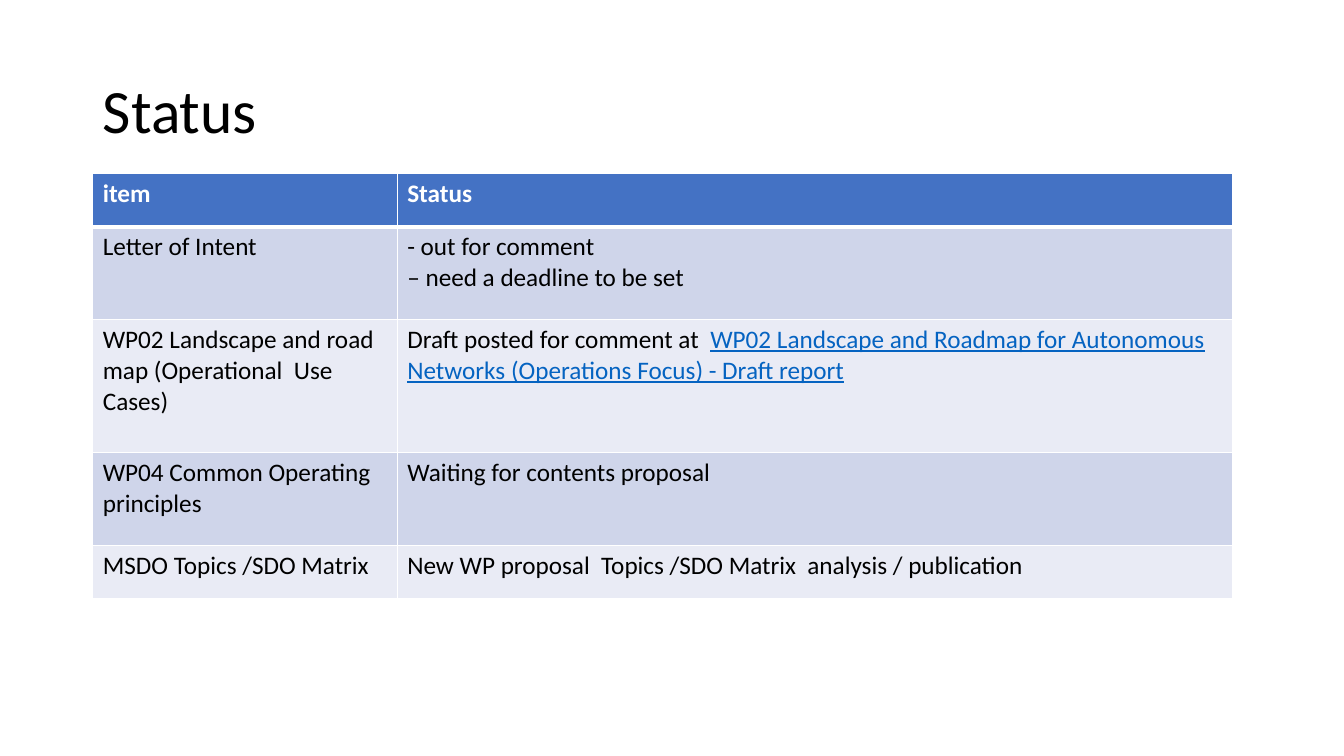
from dataclasses import dataclass

import pptx
import pptx.dml.color
import pptx.enum.text
import pptx.oxml
import pptx.oxml.ns
import pptx.util

Inches = pptx.util.Inches
Pt = pptx.util.Pt


@dataclass(frozen=True)
class Theme:
    font: str = "Calibri"
    text: str = "000000"
    white: str = "FFFFFF"
    header: str = "4472C4"
    bands: tuple = ("CFD5EA", "E9EBF5")
    link: str = "0563C1"
    title_size: int = 44
    body_size: int = 18
    rule: int = 1
    header_rule: int = 3


THEME = Theme()
COLUMNS = (3.02, 8.29)
HEIGHTS = (0.53, 0.92, 1.32, 0.92, 0.53)
HEADINGS = ("item", "Status")
ITEMS = (
    ("Letter of Intent", ("- out for comment", "– need a deadline to be set")),
    ("WP02 Landscape and road map (Operational  Use Cases)",
     ("Draft posted for comment at  ",)),
    ("WP04 Common Operating principles", ("Waiting for contents proposal",)),
    ("MSDO Topics /SDO Matrix",
     ("New WP proposal  Topics /SDO Matrix  analysis / publication",)),
)
DRAFT_ROW = 2
DRAFT_REPORT = ("WP02 Landscape and Roadmap for Autonomous Networks "
                "(Operations Focus) - Draft report")


def add_run(p, text, size=THEME.body_size, color=THEME.text, bold=False, underline=False):
    r = p.add_run()
    r.text = text
    r.font.name = THEME.font
    r.font.size = Pt(size)
    r.font.bold = bold
    r.font.underline = underline
    r.font.color.rgb = pptx.dml.color.RGBColor.from_string(color)


def set_borders(cell, top, bottom):
    tc_pr = cell._tc.get_or_add_tcPr()
    widths = {"L": THEME.rule, "R": THEME.rule, "T": top, "B": bottom}
    for side, width in widths.items():
        tc_pr.append(pptx.oxml.parse_xml(
            f'<a:ln{side} {pptx.oxml.ns.nsdecls("a")} w="{Pt(width)}">'
            f'<a:solidFill><a:srgbClr val="{THEME.white}"/></a:solidFill></a:ln{side}>'))


def fill_cell(cell, lines, row):
    is_header = row == 0
    set_borders(cell,
                THEME.header_rule if row == 1 else THEME.rule,
                THEME.header_rule if is_header else THEME.rule)
    fill = THEME.header if is_header else THEME.bands[(row - 1) % 2]
    cell.fill.solid()
    cell.fill.fore_color.rgb = pptx.dml.color.RGBColor.from_string(fill)
    tf = cell.text_frame
    for i, line in enumerate(lines):
        p = tf.add_paragraph() if i else tf.paragraphs[0]
        add_run(p, line, color=THEME.white if is_header else THEME.text, bold=is_header)


def place_title(slide, text, left, top, width, height):
    sp = slide.shapes.title
    sp.left, sp.top, sp.width, sp.height = map(Inches, (left, top, width, height))
    tf = sp.text_frame
    tf.word_wrap = True
    tf.auto_size = pptx.enum.text.MSO_AUTO_SIZE.NONE
    tf.vertical_anchor = pptx.enum.text.MSO_ANCHOR.MIDDLE
    p = tf.paragraphs[0]
    p.alignment = pptx.enum.text.PP_ALIGN.LEFT
    p.line_spacing = 0.9
    add_run(p, text, size=THEME.title_size)


def place_status_table(slide, left, top, width, height):
    rows = [(HEADINGS[0], HEADINGS[1:]), *ITEMS]
    table = slide.shapes.add_table(
        len(rows), len(COLUMNS), *map(Inches, (left, top, width, height))).table
    for column, share in zip(table.columns, COLUMNS):
        column.width = Inches(width * share / sum(COLUMNS))
    for i, (item, status) in enumerate(rows):
        table.rows[i].height = Inches(height * HEIGHTS[i] / sum(HEIGHTS))
        fill_cell(table.cell(i, 0), (item,), i)
        fill_cell(table.cell(i, 1), status, i)
    p = table.cell(DRAFT_ROW, 1).text_frame.paragraphs[0]
    add_run(p, DRAFT_REPORT, color=THEME.link, underline=True)


def main():
    prs = pptx.Presentation()
    prs.slide_width, prs.slide_height = Inches(13.33), Inches(7.5)
    slide = prs.slides.add_slide(prs.slide_layouts.get_by_name("Title Only"))
    place_title(slide, "Status", 0.92, 0.4, 11.5, 1.45)
    place_status_table(slide, 0.92, 1.72, sum(COLUMNS), sum(HEIGHTS))
    prs.save("out.pptx")


if __name__ == "__main__":
    main()
